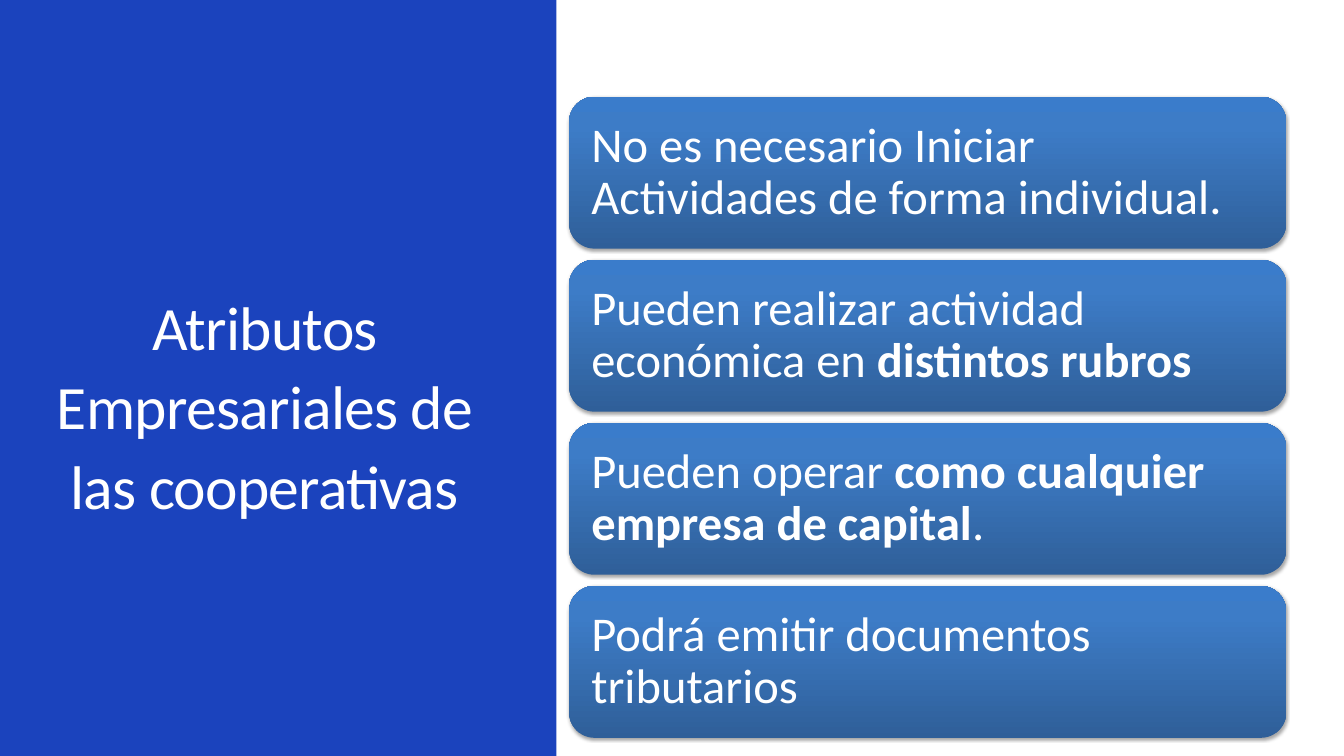
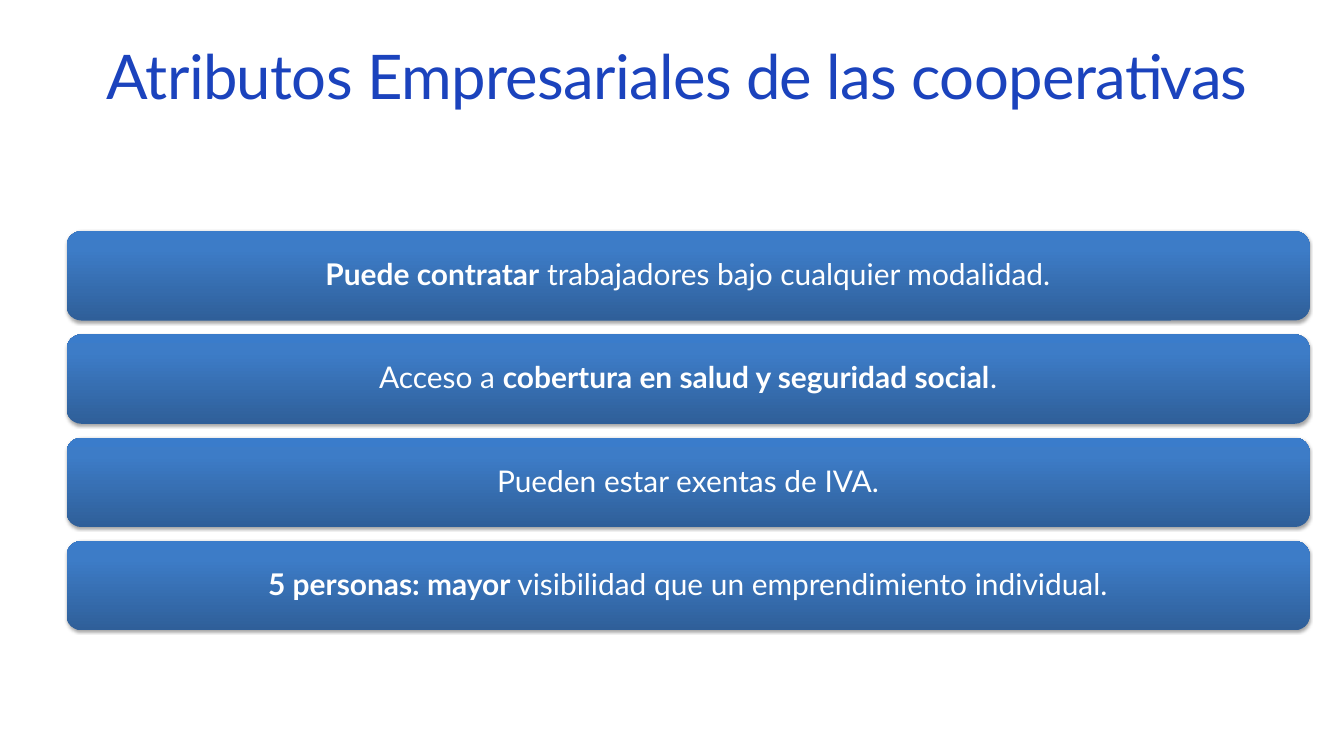
"""Builds two slides on the business attributes of cooperatives."""
from dataclasses import dataclass

from lxml import etree
from pptx import Presentation
from pptx.dml.color import RGBColor
from pptx.enum.shapes import MSO_SHAPE
from pptx.enum.text import MSO_ANCHOR, MSO_AUTO_SIZE, PP_ALIGN
from pptx.oxml.ns import qn
from pptx.util import Inches, Length, Pt

RECTANGLE = MSO_SHAPE.RECTANGLE
ROUNDED = MSO_SHAPE.ROUNDED_RECTANGLE
TOP, MIDDLE = MSO_ANCHOR.TOP, MSO_ANCHOR.MIDDLE
LEFT, CENTER = PP_ALIGN.LEFT, PP_ALIGN.CENTER
NO_AUTOFIT = MSO_AUTO_SIZE.NONE
TITLE_ONLY = 5


@dataclass(frozen=True)
class Theme:
    """Colours, fonts and type sizes of the deck."""
    royal: RGBColor = RGBColor(0x1B, 0x43, 0xBD)
    white: RGBColor = RGBColor(0xFF, 0xFF, 0xFF)
    card_stops: tuple = ((0, "2F5F99"), (80, "3D7CC7"), (100, "3A7CCB"))
    shadow: str = "000000"
    panel_font: str = "Calibri"
    list_font: str = "Lato"
    title_size: Length = Pt(66)
    panel_card_size: Length = Pt(52)
    list_card_size: Length = Pt(32)


@dataclass(frozen=True)
class Span:
    """A piece of text of one weight."""
    text: str
    bold: bool = False


@dataclass(frozen=True)
class TitleStyle:
    """Place and type of a slide title."""
    box: tuple
    insets: tuple
    font: str
    color: RGBColor
    leading: Length
    tracking: int


@dataclass(frozen=True)
class CardStack:
    """Equal cards spread evenly between a top and a bottom edge."""
    left: Length
    top: Length
    width: Length
    bottom: Length
    card_height: Length
    inset: Length
    font: str
    size: Length
    align: PP_ALIGN
    cards: tuple


THEME = Theme()
TITLE = "Atributos Empresariales de las cooperativas"

PANEL_TITLE = TitleStyle(
    (Inches(0.67), Inches(4.21), Inches(6.54), Inches(4.68)), (0, 0),
    THEME.panel_font, THEME.white, Pt(85.3), -80)
LIST_TITLE = TitleStyle(
    (Inches(1), Inches(0.54), Inches(18.16), Inches(1.18)), (Inches(0.1), Inches(0.05)),
    THEME.list_font, THEME.royal, Pt(77), -70)

PANEL_CARDS = CardStack(
    Inches(8.47), Inches(1.44), Inches(10.67), Inches(10.98), Inches(2.26), Inches(0.22),
    THEME.panel_font, THEME.panel_card_size, LEFT, (
        (Span("No es necesario Iniciar Actividades de forma individual."),),
        (Span("Pueden realizar actividad económica en "), Span("distintos rubros", True)),
        (Span("Pueden operar "), Span("como cualquier empresa de capital", True), Span(".")),
        (Span("Podrá emitir documentos tributarios"),),
    ))
LIST_CARDS = CardStack(
    Inches(0.99), Inches(3.44), Inches(18.5), Inches(9.38), Inches(1.33), Inches(0.13),
    THEME.list_font, THEME.list_card_size, CENTER, (
        (Span("Puede contratar", True), Span(" trabajadores bajo cualquier modalidad.")),
        (Span("Acceso a "), Span("cobertura en salud y seguridad social", True), Span(".")),
        (Span("Pueden estar exentas de IVA."),),
        (Span("5 personas: mayor ", True), Span("visibilidad que un emprendimiento individual.")),
    ))


def add_color(parent, value: str):
    """Add an RGB colour element and return it."""
    return etree.SubElement(parent, qn("a:srgbClr"), val=value)


def paint_card(card) -> None:
    """Give a card its vertical gradient and soft shadow."""
    card.line.fill.background()
    card.fill.background()
    card.shadow.inherit = False
    properties = card._element.spPr
    gradient = etree.Element(qn("a:gradFill"), rotWithShape="1")
    stops = etree.SubElement(gradient, qn("a:gsLst"))
    for percent, value in THEME.card_stops:
        add_color(etree.SubElement(stops, qn("a:gs"), pos=str(percent * 1000)), value)
    etree.SubElement(gradient, qn("a:lin"), ang="16200000", scaled="0")
    properties.replace(properties.find(qn("a:noFill")), gradient)
    shadow = etree.SubElement(
        properties.find(qn("a:effectLst")), qn("a:outerShdw"), blurRad=str(Pt(3.1)),
        dist=str(Pt(1.8)), dir="5400000", rotWithShape="0")
    etree.SubElement(add_color(shadow, THEME.shadow), qn("a:alpha"), val="35000")


def set_frame(frame, anchor: MSO_ANCHOR, side: Length, edge: Length) -> None:
    """Set wrapping, anchor and insets of a text frame."""
    frame.word_wrap = True
    frame.auto_size = NO_AUTOFIT
    frame.vertical_anchor = anchor
    frame.margin_left = frame.margin_right = side
    frame.margin_top = frame.margin_bottom = edge


def add_span(paragraph, span: Span, font: str, size: Length, color: RGBColor):
    """Add one formatted run to a paragraph."""
    run = paragraph.add_run()
    run.text = span.text
    run.font.name = font
    run.font.size = size
    run.font.bold = span.bold
    run.font.color.rgb = color
    return run


def set_title(slide, style: TitleStyle) -> None:
    """Place and format the title placeholder."""
    title = slide.shapes.title
    title.left, title.top, title.width, title.height = style.box
    set_frame(title.text_frame, TOP, *style.insets)
    paragraph = title.text_frame.paragraphs[0]
    paragraph.alignment = CENTER
    paragraph.line_spacing = style.leading
    run = add_span(paragraph, Span(TITLE), style.font, THEME.title_size, style.color)
    run.font._element.set("spc", str(style.tracking))


def add_cards(slide, stack: CardStack) -> None:
    """Draw a stack of cards with equal gaps."""
    pitch = (stack.bottom - stack.top - stack.card_height) / (len(stack.cards) - 1)
    for row, spans in enumerate(stack.cards):
        card = slide.shapes.add_shape(
            ROUNDED, stack.left, round(stack.top + row * pitch), stack.width, stack.card_height)
        paint_card(card)
        set_frame(card.text_frame, MIDDLE, stack.inset, stack.inset)
        paragraph = card.text_frame.paragraphs[0]
        paragraph.alignment = stack.align
        paragraph.line_spacing = 0.9
        for span in spans:
            add_span(paragraph, span, stack.font, stack.size, THEME.white)


def add_side_panel(slide, height: Length) -> None:
    """Draw the blue panel behind everything else on the slide."""
    panel = slide.shapes.add_shape(RECTANGLE, 0, 0, Inches(8.28), height)
    panel.shadow.inherit = False
    panel.fill.solid()
    panel.fill.fore_color.rgb = THEME.royal
    panel.line.fill.background()
    slide.shapes.title._element.addprevious(panel._element)


def main() -> None:
    """Build and save the deck."""
    deck = Presentation()
    deck.slide_width, deck.slide_height = Inches(20), Inches(11.25)
    layout = deck.slide_layouts[TITLE_ONLY]

    panel_slide = deck.slides.add_slide(layout)
    add_side_panel(panel_slide, deck.slide_height)
    set_title(panel_slide, PANEL_TITLE)
    add_cards(panel_slide, PANEL_CARDS)

    list_slide = deck.slides.add_slide(layout)
    set_title(list_slide, LIST_TITLE)
    add_cards(list_slide, LIST_CARDS)

    deck.save("out.pptx")


if __name__ == "__main__":
    main()
